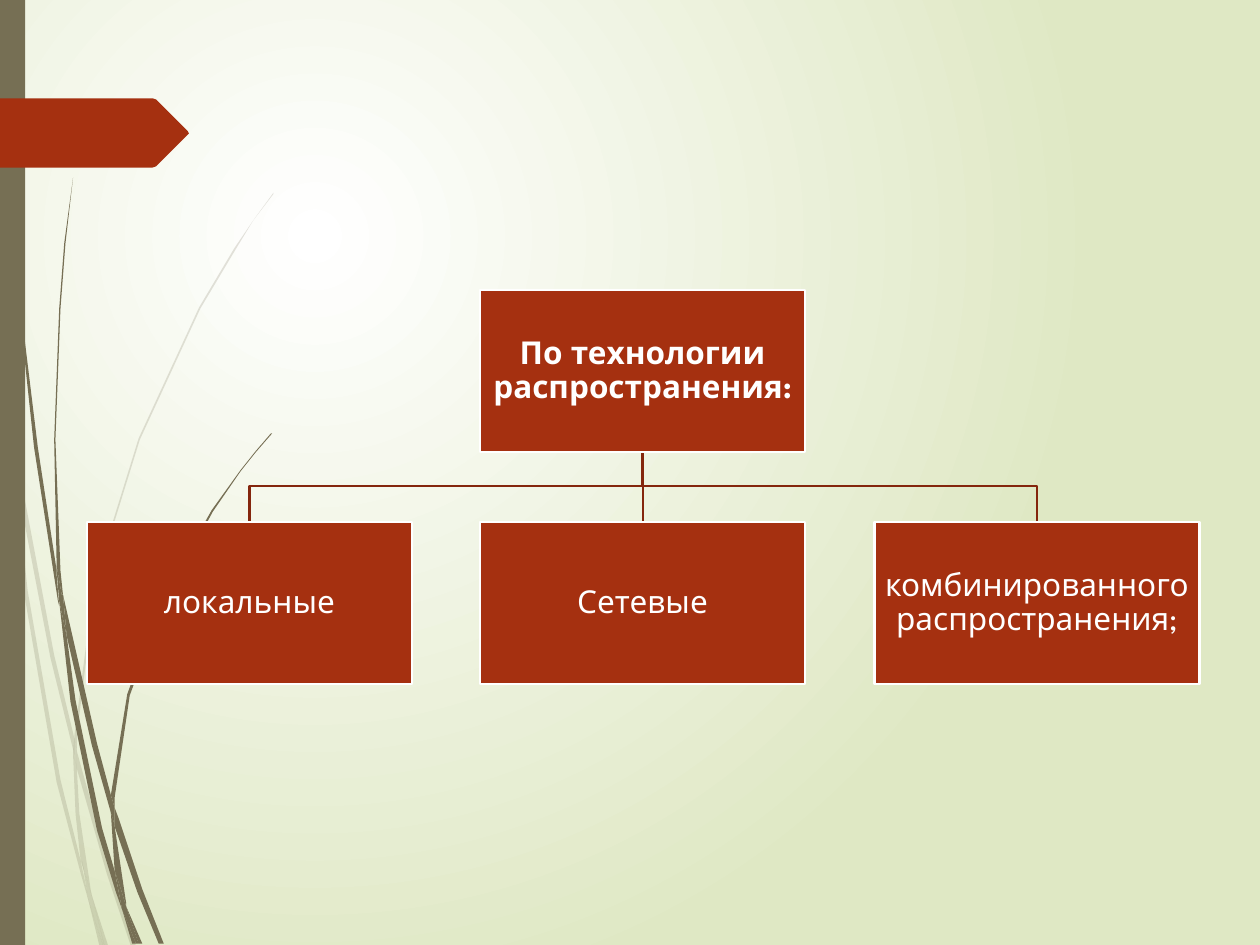
from lxml.etree import SubElement
from pptx import Presentation
from pptx.dml.color import RGBColor
from pptx.enum.shapes import MSO_CONNECTOR, MSO_SHAPE
from pptx.enum.text import MSO_ANCHOR, PP_ALIGN
from pptx.oxml.ns import qn
from pptx.util import Emu, Pt

SCALE = 9144  # EMU per px, 100 px to the inch
WIDTH, HEIGHT = 1000, 750
FONT = "League Spartan"
RUST, DARK_RUST, OLIVE, WHITE, PALE_GREEN = "A53010", "84260D", "766F54", "FFFFFF", "DFE8C4"

# Content
ROOT = "По технологии распространения:"
BRANCHES = ["локальные", "Сетевые", "комбинированного распространения;"]

# Chart grid
BOX_WIDTH, BOX_HEIGHT = 258, 129
FIRST_LEFT, LAST_LEFT = 69, 694
ROOT_TOP, BRANCH_TOP = 230, 414

# Grass outlines, as corner points in px
PALE_GRASS = [
    [(8, 350), (6, 322), (0, 282), (0, 299), (7, 344)],
    [(40, 522), (59, 599), (59, 586), (43, 520), (10, 345), (12, 376)],
    [(64, 607), (61, 596), (61, 610), (85, 694), (104, 751), (108, 751), (88, 692)],
    [(83, 751), (86, 751), (73, 711)],
    [(64, 683), (48, 619), (22, 469), (12, 376), (8, 350), (19, 470), (45, 621),
     (64, 693), (70, 714), (69, 707)],
    [(58, 599), (60, 646), (64, 683), (67, 692), (73, 711), (72, 706), (63, 646),
     (61, 610), (61, 608)],
    [(61, 584), (76, 462), (111, 349), (159, 245), (187, 198), (201, 175), (217, 154),
     (217, 153), (201, 175), (186, 197), (158, 244), (110, 348), (75, 461), (59, 584),
     (59, 586), (61, 596)],
    [(70, 714), (79, 751), (82, 751)],
    [(61, 608), (61, 610), (61, 596), (59, 586), (58, 599)],
    [(67, 692), (65, 683), (69, 707), (70, 714), (82, 751), (83, 751), (73, 711)],
]
DARK_GRASS = [
    [(5, 110), (14, 233), (27, 355), (46, 477), (47, 481), (45, 457), (45, 453),
     (30, 355), (15, 232), (6, 109), (4, 48), (3, 0), (2, 0), (3, 48)],
    [(73, 592), (88, 645), (88, 633), (88, 631), (77, 590), (50, 472), (53, 505)],
    [(94, 649), (91, 641), (91, 656), (109, 708), (126, 749), (130, 749), (113, 706)],
    [(91, 691), (81, 657), (60, 556), (53, 505), (47, 477), (56, 557), (77, 659),
     (92, 708), (97, 722), (96, 717)],
    [(50, 472), (48, 453), (44, 349), (48, 245), (52, 193), (58, 141), (51, 193),
     (47, 245), (43, 349), (45, 449), (49, 472)],
    [(110, 749), (113, 749), (100, 719)],
    [(47, 477), (53, 505), (50, 472), (49, 472), (45, 449), (45, 453)],
    [(91, 633), (103, 552), (131, 476), (169, 406), (191, 374), (203, 359), (216, 344),
     (215, 344), (203, 358), (191, 373), (168, 405), (129, 474), (101, 551), (88, 631),
     (91, 641)],
    [(97, 722), (105, 749), (108, 749)],
    [(88, 645), (91, 691), (96, 706), (100, 719), (100, 716), (91, 656), (90, 651)],
    [(88, 645), (90, 651), (91, 656), (91, 641), (88, 631), (88, 633)],
    [(96, 706), (91, 691), (96, 717), (97, 722), (108, 749), (110, 749), (100, 719)],
]
TAG = [(149, 107), (124, 132), (121, 133), (0, 133), (0, 78), (121, 78), (124, 79),
       (149, 104), (150, 106)]


def px(value):
    return Emu(value * SCALE)


def color(value):
    return RGBColor.from_string(value)


def paint(shape, fill=None, line=None):
    shape.shadow.inherit = False
    if fill:
        shape.fill.solid()
        shape.fill.fore_color.rgb = color(fill)
    else:
        shape.fill.background()
    if line:
        shape.line.color.rgb = color(line)
        shape.line.width = Pt(1.25)
    else:
        shape.line.fill.background()


def add_outline(shapes, points, fill=None, line=None, close=True):
    builder = shapes.build_freeform(*points[0], scale=SCALE)
    builder.add_line_segments(points[1:], close=close)
    outline = builder.convert_to_shape()
    paint(outline, fill, line)
    return outline


def add_grass(page, blades, opacity=100):
    group = page.shapes.add_group_shape()
    for points in blades:
        blade = add_outline(group.shapes, points, OLIVE)
        if opacity < 100:
            tint = blade._element.spPr.find(f"{qn('a:solidFill')}/{qn('a:srgbClr')}")
            SubElement(tint, qn("a:alpha"), val=str(opacity * 1000))


def add_box(page, left, top, text, bold=False):
    box = page.shapes.add_shape(MSO_SHAPE.RECTANGLE, px(left), px(top),
                                px(BOX_WIDTH), px(BOX_HEIGHT))
    paint(box, RUST, WHITE)
    frame = box.text_frame
    frame.text = text
    frame.word_wrap = True
    frame.vertical_anchor = MSO_ANCHOR.MIDDLE
    frame.margin_left = frame.margin_right = frame.margin_top = frame.margin_bottom = px(1)
    paragraph = frame.paragraphs[0]
    paragraph.alignment = PP_ALIGN.CENTER
    paragraph.line_spacing = 0.9
    font = paragraph.runs[0].font
    font.name, font.size, font.bold = FONT, Pt(18), bold
    font.color.rgb = color(WHITE)
    return box


def set_background(page):
    fill = page.background.fill
    fill.gradient()
    for stop, shade in zip(fill.gradient_stops, (WHITE, PALE_GREEN)):
        stop.color.rgb = color(shade)
    gradient = page._element.find(f".//{qn('a:gradFill')}")
    gradient.remove(gradient.find(qn("a:lin")))
    circle = SubElement(gradient, qn("a:path"), path="circle")
    SubElement(circle, qn("a:fillToRect"), l="50000", t="50000", r="100000", b="100000")


def main():
    deck = Presentation()
    deck.slide_width, deck.slide_height = px(WIDTH), px(HEIGHT)
    page = deck.slides.add_slide(deck.slide_layouts[6])
    set_background(page)

    # Grass, side bar and tag
    add_grass(page, PALE_GRASS, opacity=20)
    add_grass(page, DARK_GRASS)
    bar = page.shapes.add_shape(MSO_SHAPE.RECTANGLE, 0, 0, px(20), px(HEIGHT))
    paint(bar, OLIVE)
    add_outline(page.shapes, TAG, RUST)

    # Bent lines to the outer branches
    middle = len(BRANCHES) // 2
    lefts = [FIRST_LEFT + (LAST_LEFT - FIRST_LEFT) * i // (len(BRANCHES) - 1)
             for i in range(len(BRANCHES))]
    centers = [left + BOX_WIDTH // 2 for left in lefts]
    root_bottom = ROOT_TOP + BOX_HEIGHT
    bend = (root_bottom + BRANCH_TOP) // 2
    for center in (centers[-1], centers[0]):
        add_outline(page.shapes, [(centers[middle], root_bottom), (centers[middle], bend),
                                  (center, bend), (center, BRANCH_TOP)],
                    line=DARK_RUST, close=False)

    # Boxes and the straight line between the middle ones
    stem = page.shapes.add_connector(MSO_CONNECTOR.STRAIGHT, px(centers[middle]),
                                     px(root_bottom), px(centers[middle]), px(BRANCH_TOP))
    stem.line.color.rgb = color(DARK_RUST)
    stem.line.width = Pt(1.25)
    SubElement(stem._element.spPr, qn("a:effectLst"))
    root = add_box(page, lefts[middle], ROOT_TOP, ROOT, bold=True)
    boxes = [add_box(page, left, BRANCH_TOP, text) for left, text in zip(lefts, BRANCHES)]
    stem.begin_connect(root, 2)
    stem.end_connect(boxes[middle], 0)

    deck.save("out.pptx")


if __name__ == "__main__":
    main()
